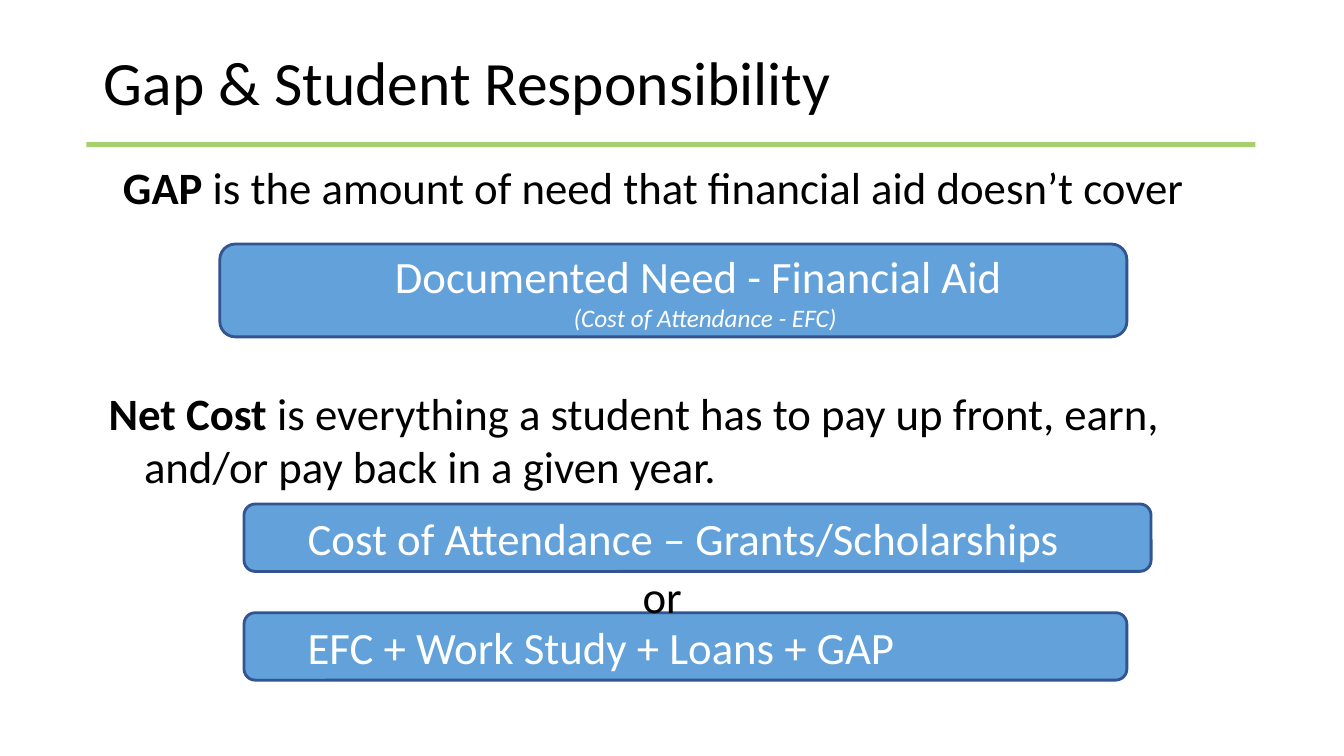
from dataclasses import dataclass

from lxml import etree
from pptx import Presentation
from pptx.dml.color import RGBColor
from pptx.enum.shapes import MSO_SHAPE
from pptx.enum.text import MSO_ANCHOR, PP_ALIGN
from pptx.oxml.ns import qn
from pptx.util import Cm, Pt

RECTANGLE = MSO_SHAPE.RECTANGLE
ROUNDED = MSO_SHAPE.ROUNDED_RECTANGLE
TOP, MIDDLE = MSO_ANCHOR.TOP, MSO_ANCHOR.MIDDLE
LEFT, CENTER = PP_ALIGN.LEFT, PP_ALIGN.CENTER

BLACK = RGBColor(0x00, 0x00, 0x00)
WHITE = RGBColor(0xFF, 0xFF, 0xFF)
GREEN = RGBColor(0xA7, 0xCE, 0x6F)
BLUE = RGBColor(0x0F, 0x6F, 0xC6)
NAVY = RGBColor(0x32, 0x54, 0x91)

FONT = "Calibri"
FORMULA_OPACITY = 65
FORMULA_INDENT = 1.27


@dataclass(frozen=True)
class Run:
    text: str
    size: float = 32
    bold: bool = False
    italic: bool = False


@dataclass(frozen=True)
class Line:
    runs: tuple[Run, ...]
    align: PP_ALIGN = LEFT
    margin: float = 0
    indent: float = 0
    spacing: float = 1.0


@dataclass(frozen=True)
class Block:
    left: float
    top: float
    width: float
    height: float
    lines: tuple[Line, ...]
    anchor: MSO_ANCHOR = TOP
    side_inset: float = 0.25


FORMULAS = (
    Block(6.15, 12.7, 22.86, 1.7, (
        Line((Run("Cost of Attendance – Grants/Scholarships"),), indent=FORMULA_INDENT),
    ), MIDDLE),
    Block(6.15, 15.44, 22.25, 1.7, (
        Line((Run("EFC + Work Study + Loans + GAP"),), indent=FORMULA_INDENT),
    ), MIDDLE),
    Block(5.54, 6.15, 22.86, 2.34, (
        Line((Run("Documented Need - Financial Aid"),), CENTER, indent=FORMULA_INDENT),
        Line((Run("(Cost of Attendance - EFC)", 18, italic=True),), CENTER, indent=1.6),
    ), MIDDLE),
)

STATEMENTS = (
    Block(2.49, 0.79, 22.66, 2.74, (
        Line((Run("Gap & Student Responsibility", 44),), spacing=0.9),
    ), MIDDLE, 0.13),
    Block(2.97, 4.06, 29.21, 2.54, (
        Line((
            Run("GAP", bold=True),
            Run(" is the amount of need that financial aid doesn’t cover"),
        ), margin=0.64, indent=-0.64, spacing=0.9),
    ), side_inset=0.13),
    Block(2.49, 9.58, 28.4, 2.97, (
        Line((
            Run("Net Cost ", bold=True),
            Run("is everything a student has to pay up front, earn, "
                "and/or pay back in a given year."),
        ), margin=0.89, indent=-0.89),
    )),
    Block(2.49, 14.2, 28.4, 1.6, (Line((Run("or"),), CENTER),)),
)


def write_text(frame, block: Block, color: RGBColor) -> None:
    frame.word_wrap = True
    frame.vertical_anchor = block.anchor
    frame.margin_left = frame.margin_right = Cm(block.side_inset)
    frame.margin_top = frame.margin_bottom = Cm(0.13)
    for index, line in enumerate(block.lines):
        paragraph = frame.add_paragraph() if index else frame.paragraphs[0]
        paragraph.alignment = line.align
        paragraph.line_spacing = line.spacing
        properties = paragraph._p.get_or_add_pPr()
        properties.set("marL", str(Cm(line.margin)))
        properties.set("indent", str(Cm(line.indent)))
        for part in line.runs:
            run = paragraph.add_run()
            run.text = part.text
            run.font.name = FONT
            run.font.size = Pt(part.size)
            run.font.bold = part.bold
            run.font.italic = part.italic
            run.font.color.rgb = color


def place(block: Block) -> tuple[Cm, Cm, Cm, Cm]:
    return Cm(block.left), Cm(block.top), Cm(block.width), Cm(block.height)


def draw_title_rule(slide) -> None:
    rule = slide.shapes.add_shape(RECTANGLE, Cm(2.18), Cm(3.58), Cm(29.46), Cm(0.13))
    rule.shadow.inherit = False
    rule.fill.solid()
    rule.fill.fore_color.rgb = GREEN
    rule.line.fill.background()


def draw_formula(slide, block: Block) -> None:
    formula = slide.shapes.add_shape(ROUNDED, *place(block))
    formula.shadow.inherit = False
    formula.fill.solid()
    formula.fill.fore_color.rgb = BLUE
    tint = formula._element.spPr.find(qn("a:solidFill")).find(qn("a:srgbClr"))
    etree.SubElement(tint, qn("a:alpha")).set("val", str(FORMULA_OPACITY * 1000))
    formula.line.color.rgb = NAVY
    formula.line.width = Pt(2)
    write_text(formula.text_frame, block, WHITE)


def draw_statement(slide, block: Block) -> None:
    statement = slide.shapes.add_textbox(*place(block))
    write_text(statement.text_frame, block, BLACK)


def main() -> None:
    presentation = Presentation()
    presentation.slide_width = Cm(33.87)
    presentation.slide_height = Cm(19.05)
    slide = presentation.slides.add_slide(presentation.slide_layouts[6])
    draw_title_rule(slide)
    for formula in FORMULAS:
        draw_formula(slide, formula)
    for statement in STATEMENTS:
        draw_statement(slide, statement)
    presentation.save("out.pptx")


if __name__ == "__main__":
    main()
